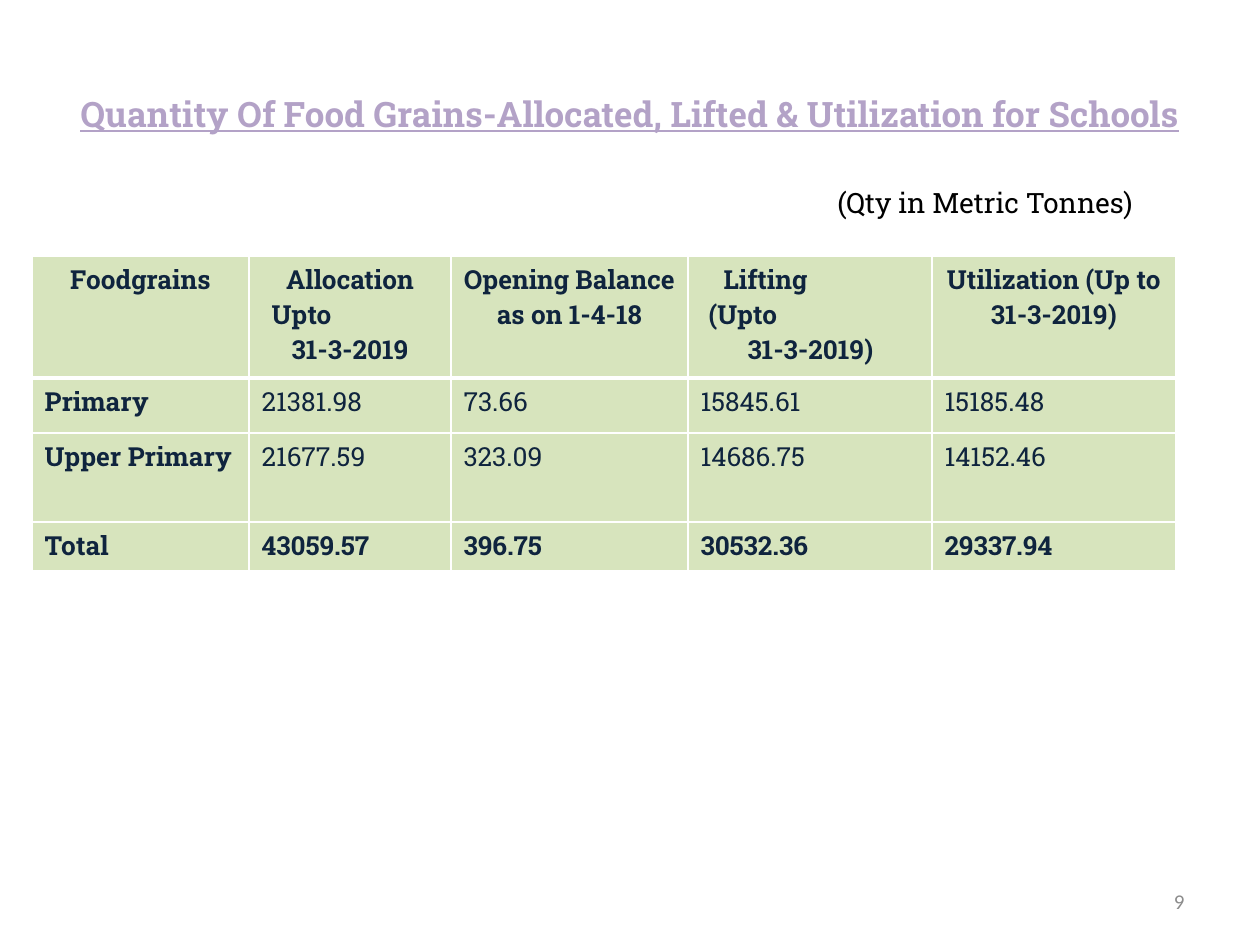
from dataclasses import dataclass

from lxml.etree import SubElement
from pptx import Presentation
from pptx.dml.color import RGBColor
from pptx.enum.text import MSO_ANCHOR, PP_ALIGN
from pptx.oxml.ns import qn
from pptx.slide import Slide
from pptx.table import _Cell
from pptx.text.text import TextFrame
from pptx.util import Emu, Pt

EMU_PER_PX = 914400 / 126


@dataclass(frozen=True)
class Theme:
    heading: str = "B3A2C7"
    ink: str = "0F243E"
    note: str = "000000"
    page: str = "8C8C8C"
    cell: str = "D7E4BD"
    rule: str = "FFFFFF"
    slab: str = "Roboto Slab"
    sans: str = "Calibri"
    heading_pt: int = 20
    note_pt: int = 16
    table_pt: int = 15
    page_pt: int = 12
    rule_pt: int = 1
    header_rule_pt: int = 3


THEME = Theme()


@dataclass(frozen=True)
class Style:
    font: str
    size: int
    color: str
    bold: bool = False
    underline: bool = False


@dataclass(frozen=True)
class Line:
    text: str
    align: PP_ALIGN = PP_ALIGN.LEFT
    indent: int = 0


@dataclass(frozen=True)
class Label:
    left: int
    top: int
    width: int
    height: int
    line: Line
    style: Style
    anchor: MSO_ANCHOR = MSO_ANCHOR.MIDDLE


REGULAR = Style(THEME.slab, THEME.table_pt, THEME.ink)
BOLD = Style(THEME.slab, THEME.table_pt, THEME.ink, bold=True)

LABELS = [
    Label(63, 38, 1134, 151,
          Line("Quantity Of Food Grains-Allocated, Lifted & Utilization for Schools",
               PP_ALIGN.CENTER),
          Style(THEME.slab, THEME.heading_pt, THEME.heading, True, True)),
    Label(777, 179, 400, 47, Line("(Qty in Metric Tonnes)", indent=48),
          Style(THEME.slab, THEME.note_pt, THEME.note), MSO_ANCHOR.TOP),
    Label(903, 876, 294, 50, Line("9", PP_ALIGN.RIGHT),
          Style(THEME.sans, THEME.page_pt, THEME.page)),
]

TABLE_LEFT, TABLE_TOP = 32, 256
COLUMN_WIDTHS = [217, 202, 237, 244, 244]
ROW_HEIGHTS = [122, 55, 89, 49]
HEADERS = [
    [Line("Foodgrains", PP_ALIGN.CENTER)],
    [Line("Allocation", PP_ALIGN.CENTER), Line("Upto", indent=10),
     Line("31-3-2019", PP_ALIGN.CENTER)],
    [Line("Opening Balance as on 1-4-18", PP_ALIGN.CENTER)],
    [Line("Lifting", indent=23), Line("(Upto", indent=8),
     Line("31-3-2019)", indent=47)],
    [Line("Utilization (Up to 31-3-2019)", PP_ALIGN.CENTER)],
]
QUANTITIES = [
    ["Primary", "21381.98", "73.66", "15845.61", "15185.48"],
    ["Upper Primary", "21677.59", "323.09", "14686.75", "14152.46"],
    ["Total", "43059.57", "396.75", "30532.36", "29337.94"],
]


def px(length: int) -> Emu:
    return Emu(round(length * EMU_PER_PX))


def write_lines(frame: TextFrame, lines: list[Line], style: Style) -> None:
    for position, line in enumerate(lines):
        paragraph = frame.add_paragraph() if position else frame.paragraphs[0]
        paragraph.alignment = line.align
        if line.indent:
            paragraph._p.get_or_add_pPr().set("marL", str(px(line.indent)))
        run = paragraph.add_run()
        run.text = line.text
        run.font.name = style.font
        run.font.size = Pt(style.size)
        run.font.bold = style.bold
        run.font.underline = style.underline
        run.font.color.rgb = RGBColor.from_string(style.color)


def draw_label(slide: Slide, label: Label) -> None:
    box = slide.shapes.add_textbox(
        px(label.left), px(label.top), px(label.width), px(label.height))
    box.text_frame.word_wrap = True
    box.text_frame.vertical_anchor = label.anchor
    write_lines(box.text_frame, [label.line], label.style)


def draw_borders(cell: _Cell, row: int) -> None:
    widths = {side: THEME.rule_pt for side in ("lnL", "lnR", "lnT", "lnB")}
    if row == 0:
        widths["lnB"] = THEME.header_rule_pt
    elif row == 1:
        widths["lnT"] = THEME.header_rule_pt
    properties = cell._tc.get_or_add_tcPr()
    for side, width in widths.items():
        border = SubElement(properties, qn(f"a:{side}"), w=str(Pt(width)))
        fill = SubElement(border, qn("a:solidFill"))
        SubElement(fill, qn("a:srgbClr"), val=THEME.rule)


def draw_cell(cell: _Cell, row: int, lines: list[Line], style: Style) -> None:
    draw_borders(cell, row)
    cell.fill.solid()
    cell.fill.fore_color.rgb = RGBColor.from_string(THEME.cell)
    write_lines(cell.text_frame, lines, style)


def draw_grain_table(slide: Slide) -> None:
    rows = [HEADERS] + [[[Line(text)] for text in row] for row in QUANTITIES]
    grains = slide.shapes.add_table(
        len(rows), len(COLUMN_WIDTHS), px(TABLE_LEFT), px(TABLE_TOP),
        px(sum(COLUMN_WIDTHS)), px(sum(ROW_HEIGHTS))).table
    grains.horz_banding = False
    for column, width in zip(grains.columns, COLUMN_WIDTHS):
        column.width = px(width)
    for row, height in zip(grains.rows, ROW_HEIGHTS):
        row.height = px(height)
    for r, row in enumerate(rows):
        for c, lines in enumerate(row):
            bold = r in (0, len(rows) - 1) or c == 0
            draw_cell(grains.cell(r, c), r, lines, BOLD if bold else REGULAR)


def main() -> None:
    deck = Presentation()
    deck.slide_width, deck.slide_height = px(1260), px(945)
    slide = deck.slides.add_slide(deck.slide_layouts[6])
    draw_grain_table(slide)
    for label in LABELS:
        draw_label(slide, label)
    deck.save("out.pptx")


if __name__ == "__main__":
    main()
